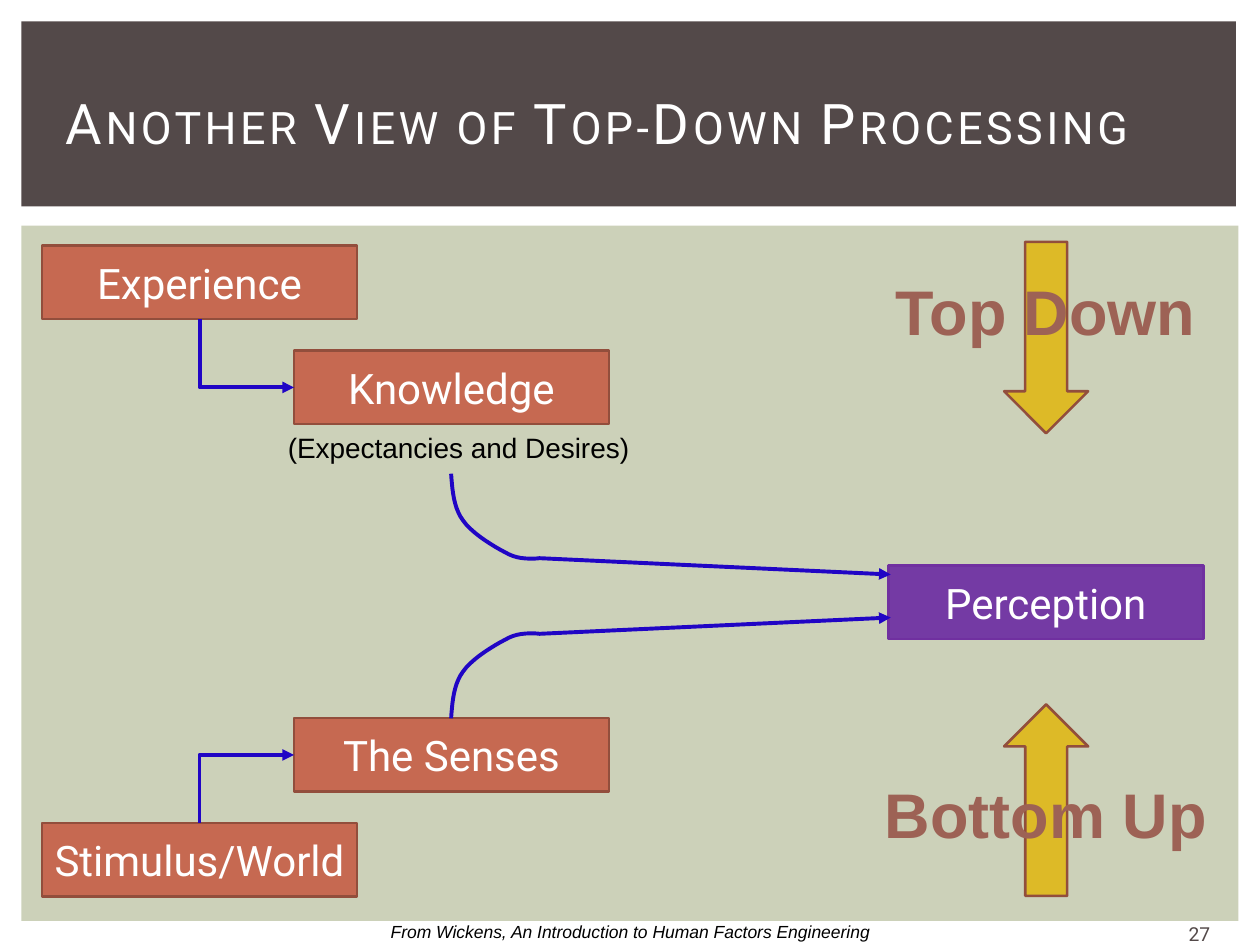
from lxml.etree import SubElement
from pptx import Presentation
from pptx.dml.color import RGBColor
from pptx.enum.shapes import MSO_CONNECTOR as Link, MSO_SHAPE as Preset
from pptx.enum.text import MSO_ANCHOR as Anchor, MSO_AUTO_SIZE as Fit, PP_ALIGN as Align
from pptx.oxml.ns import qn
from pptx.util import Pt

COLORS = {
    "band": "534949", "panel": "CCD1B9", "white": "FFFFFF", "black": "000000",
    "source": "C66951", "source_edge": "924E3C", "result": "743AA4",
    "result_edge": "7030A0", "flow": "2005C5", "arrow": "DDBA27",
    "direction": "9D6255",
}
FONTS = {
    "title": {"name": "Roboto", "size": Pt(32), "color": "white"},
    "box": {"name": "Roboto", "size": Pt(24), "color": "white"},
    "number": {"name": "Roboto", "size": Pt(11), "color": "band"},
    "note": {"name": "Arial", "size": Pt(16), "color": "black"},
    "direction": {"name": "Arial", "size": Pt(36), "bold": True, "color": "direction"},
    "credit": {"name": "Arial", "size": Pt(10), "italic": True, "color": "black"},
}

TITLE = "Another View of Top-Down Processing"
TITLE_AREA = (30.2, 28.1, 660.2, 82.8)
BANDS = [("panel", (12.2, 128.9, 695.5, 397.4)), ("band", (12.2, 12.2, 694.1, 105.8))]

BOX_WIDTH, BOX_HEIGHT = 180, 42
BOXES = [  # text, left, top, colour
    ("Experience", 24, 140.4, "source"),
    ("Stimulus/World", 24, 470.4, "source"),
    ("Knowledge", 168, 200.4, "source"),
    ("The Senses", 168, 410.4, "source"),
    ("Perception", 507.6, 323.2, "result"),
]
TOP, LEFT, BOTTOM = 0, 1, 2
STEPS = [("Experience", BOTTOM, "Knowledge"), ("Stimulus/World", TOP, "The Senses")]

# Knowledge to Perception; the path from The Senses mirrors it about MIRROR_Y.
CURVE_START = (257.8, 270.7)
CURVE_SEGMENTS = [
    [(258.5, 280), (259.2, 290.2), (264.6, 297.4)],
    [(270, 305.3), (283.7, 313.2), (290.9, 316.8)],
    [(298.1, 320.4), (308.2, 319), (308.2, 319)],
]
CURVE_TIP = (509, 328.3)
MIRROR_Y = 340.6
SAMPLES = 10

ARROWS = [(138.2, 0), (402.5, 180)]  # top, rotation
ARROW_LEFT, ARROW_WIDTH, ARROW_HEIGHT = 573.8, 48, 109.4

LABELS = [  # text, font, area
    ("(Expectancies and Desires)", "note", (156.2, 242.6, 211.7, 26.6)),
    ("Top Down", "direction", (504, 151.9, 187.2, 51.1)),
    ("Bottom Up", "direction", (497.5, 439.2, 200.2, 51.1)),
    ("From Wickens, An Introduction to Human Factors Engineering", "credit",
     (214.6, 522.7, 290.9, 19.4)),
    ("27", "number", (662.4, 522.7, 46.1, 21.6)),
]


def rgb(key):
    return RGBColor.from_string(COLORS[key])


def write(frame, text, style, align=Align.CENTER):
    frame.word_wrap = False
    frame.vertical_anchor = Anchor.MIDDLE
    paragraph = frame.paragraphs[0]
    paragraph.alignment = align
    run = paragraph.add_run()
    run.text = text
    for attribute, value in FONTS[style].items():
        if attribute == "color":
            run.font.color.rgb = rgb(value)
        else:
            setattr(run.font, attribute, value)
    return run


def add_filled(shapes, preset, area, fill, edge=None):
    shape = shapes.add_shape(preset, *map(Pt, area))
    shape.shadow.inherit = False
    shape.fill.solid()
    shape.fill.fore_color.rgb = rgb(fill)
    if edge:
        shape.line.color.rgb = rgb(edge)
        shape.line.width = Pt(1.5)
    else:
        shape.line.fill.background()
    return shape


def style_flow(flow):
    """Give a connector or open curve the flow colour and an arrowhead at its end."""
    flow.line.color.rgb = rgb("flow")
    flow.line.width = Pt(2.25)
    properties = flow._element.spPr
    SubElement(properties.find(qn("a:ln")), qn("a:tailEnd"), type="triangle")
    if properties.find(qn("a:effectLst")) is None:
        SubElement(properties, qn("a:effectLst"))


def add_step(shapes, origin, side, target):
    """Join two boxes with one bend: vertical first, then horizontal."""
    step = shapes.add_connector(Link.ELBOW, 0, 0, 0, 0)
    step.begin_connect(origin, side)
    step.end_connect(target, LEFT)
    goes_down = step.end_y > step.begin_y
    middle_x, middle_y = step.left + step.width // 2, step.top + step.height // 2
    # The one-bend preset runs sideways first, so it is turned a quarter.
    step.width, step.height = step.height, step.width
    step.left, step.top = middle_x - step.width // 2, middle_y - step.height // 2
    properties = step._element.spPr
    properties.find(qn("a:prstGeom")).set("prst", "bentConnector2")
    turn = properties.find(qn("a:xfrm"))
    for attribute, value in {"rot": "16200000", "flipH": str(int(goes_down)),
                             "flipV": "0"}.items():
        turn.set(attribute, value)
    style_flow(step)


def curve_points():
    points = [CURVE_START]
    for segment in CURVE_SEGMENTS:
        controls = [points[-1], *segment]
        for i in range(1, SAMPLES + 1):
            t = i / SAMPLES
            weights = ((1 - t) ** 3, 3 * t * (1 - t) ** 2, 3 * t * t * (1 - t), t ** 3)
            points.append(tuple(sum(w * c[axis] for w, c in zip(weights, controls))
                                for axis in (0, 1)))
    return points + [CURVE_TIP]


def add_curve(shapes, points):
    start, *rest = [(Pt(x), Pt(y)) for x, y in points]
    builder = shapes.build_freeform(*start)
    builder.add_line_segments(rest, close=False)
    curve = builder.convert_to_shape()
    curve.fill.background()
    curve.shadow.inherit = False
    style_flow(curve)


def main():
    deck = Presentation()
    deck.slide_width, deck.slide_height = Pt(720), Pt(540)
    slide = deck.slides.add_slide(deck.slide_layouts[5])
    shapes = slide.shapes

    title = shapes.title
    for fill, area in BANDS:
        band = add_filled(shapes, Preset.RECTANGLE, area, fill)
    band._element.addnext(title._element)
    title.left, title.top, title.width, title.height = map(Pt, TITLE_AREA)
    heading = write(title.text_frame, TITLE, "title", Align.LEFT)
    title.text_frame.word_wrap = True
    title.text_frame.auto_size = Fit.NONE
    for attribute, value in {"cap": "small", "spc": "200"}.items():
        heading.font._element.set(attribute, value)

    boxes = {}
    for text, left, top, color in BOXES:
        area = (left, top, BOX_WIDTH, BOX_HEIGHT)
        boxes[text] = add_filled(shapes, Preset.RECTANGLE, area, color, color + "_edge")
        write(boxes[text].text_frame, text, "box")
    for origin, side, target in STEPS:
        add_step(shapes, boxes[origin], side, boxes[target])

    from_knowledge = curve_points()
    from_senses = [(x, 2 * MIRROR_Y - y) for x, y in from_knowledge]
    for points in (from_knowledge, from_senses):
        add_curve(shapes, points)

    for top, rotation in ARROWS:
        area = (ARROW_LEFT, top, ARROW_WIDTH, ARROW_HEIGHT)
        arrow = add_filled(shapes, Preset.DOWN_ARROW, area, "arrow", "source_edge")
        arrow.rotation = rotation

    for text, style, area in LABELS:
        label = shapes.add_textbox(*map(Pt, area))
        write(label.text_frame, text, style)

    deck.save("out.pptx")


if __name__ == "__main__":
    main()
